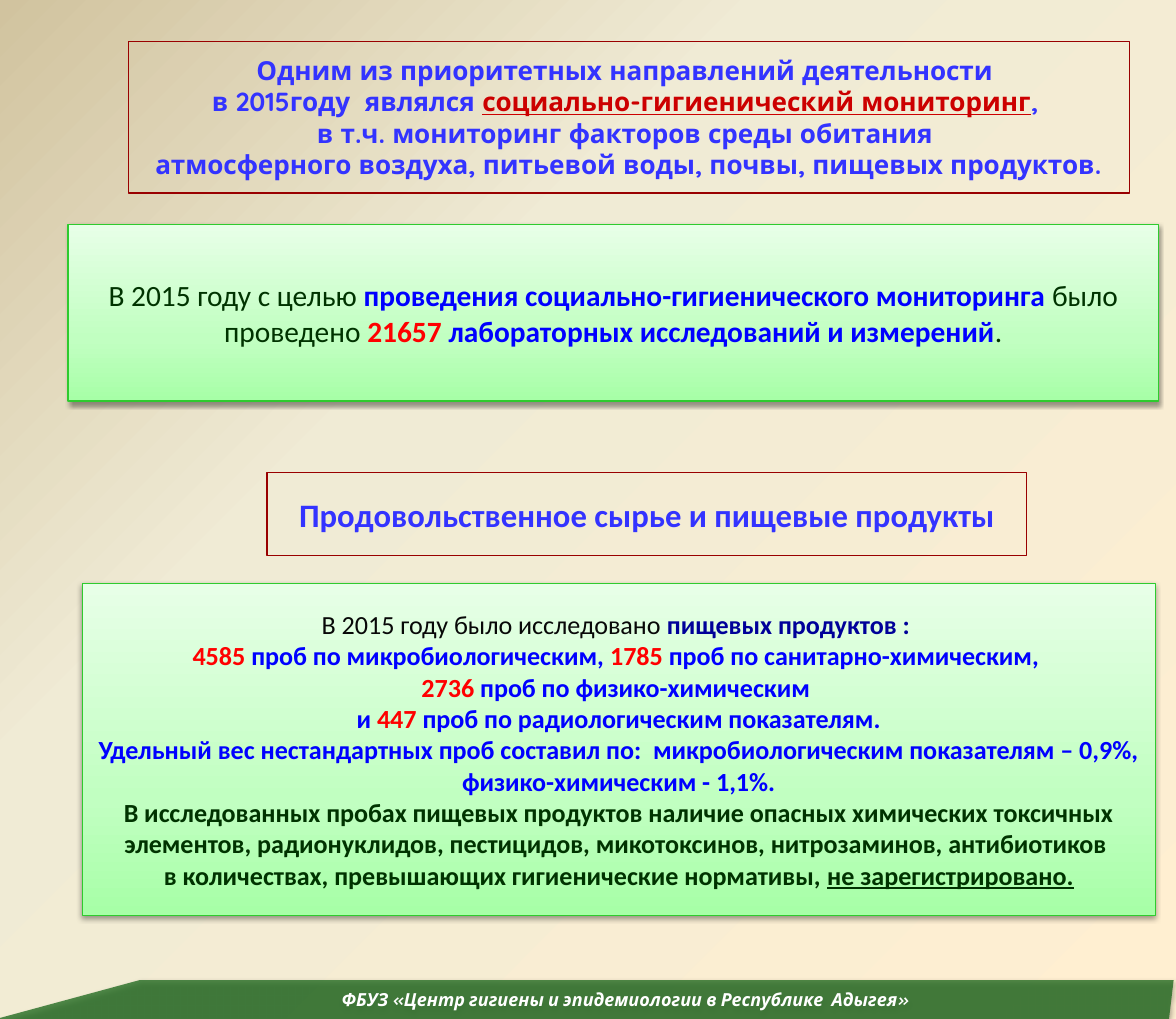
from lxml import etree
from pptx import Presentation
from pptx.dml.color import RGBColor
from pptx.enum.shapes import MSO_SHAPE
from pptx.enum.text import MSO_ANCHOR, MSO_AUTO_SIZE, PP_ALIGN
from pptx.oxml.ns import qn
from pptx.util import Cm, Pt

CENTER = PP_ALIGN.CENTER
MIDDLE = MSO_ANCHOR.MIDDLE
NO_FIT = MSO_AUTO_SIZE.NONE
RECT = MSO_SHAPE.RECTANGLE

VIOLET = RGBColor(0x33, 0x33, 0xFF)
BLUE = RGBColor(0x00, 0x00, 0xFF)
NAVY = RGBColor(0x00, 0x00, 0x99)
RED = RGBColor(0xFF, 0x00, 0x00)
CRIMSON = RGBColor(0xCC, 0x00, 0x00)
MAROON = RGBColor(0x99, 0x00, 0x00)
FOREST = RGBColor(0x00, 0x33, 0x00)
INK = RGBColor(0x08, 0x08, 0x08)
WHITE = RGBColor(0xFF, 0xFF, 0xFF)
BORDER_GREEN = RGBColor(0x2E, 0xCB, 0x2E)
BAND_GREEN = RGBColor(0x19, 0x66, 0x19)
BLACK = RGBColor(0x00, 0x00, 0x00)


def stops(*pairs):
    return [(pos, RGBColor.from_string(color)) for pos, color in pairs]


SAND = stops((0, "FFEFD1"), (65, "F0EBD5"), (100, "D1C39F"))
MINT = stops((0, "A7FFA7"), (35, "C1FFC1"), (100, "E7FFE7"))


def add_color(parent, color, alpha=None):
    clr = etree.SubElement(parent, qn("a:srgbClr"), val=str(color))
    if alpha is not None:
        etree.SubElement(clr, qn("a:alpha"), val=str(alpha * 1000))


def set_gradient(fill, element, color_stops, angle):
    """Fill with any number of stops; the angle runs counter-clockwise."""
    fill.gradient()
    fill.gradient_angle = angle
    gs_list = next(element.iter(qn("a:gsLst")))
    for old in list(gs_list):
        gs_list.remove(old)
    for pos, color in color_stops:
        add_color(etree.SubElement(gs_list, qn("a:gs"), pos=str(pos * 1000)), color)


def add_shadow(sp, alpha, dist):
    sp.shadow.inherit = False
    effects = sp.element.spPr.find(qn("a:effectLst"))
    shadow = etree.SubElement(effects, qn("a:outerShdw"), blurRad=str(int(Pt(3.1))),
                              dist=str(int(Pt(dist))), dir="5400000", rotWithShape="0")
    add_color(shadow, BLACK, alpha)


class Deck:
    def __init__(self, width, height):
        self.prs = Presentation()
        self.prs.slide_width, self.prs.slide_height = Cm(width), Cm(height)
        self.s = self.prs.slides.add_slide(self.prs.slide_layouts[1])
        set_gradient(self.s.background.fill, self.s.element, SAND, 135)

    def add_lines(self, sp, lines, size, font, italic=False):
        """Each line is a list of runs: text, colour and style letters (b, u)."""
        tf = sp.text_frame
        tf.word_wrap, tf.auto_size, tf.vertical_anchor = True, NO_FIT, MIDDLE
        for i, line in enumerate(lines):
            p = tf.add_paragraph() if i else tf.paragraphs[0]
            p.alignment, p.space_before = CENTER, Pt(0)
            for text, color, style in line:
                r = p.add_run()
                r.text = text
                r.font.size, r.font.name = Pt(size), font
                r.font.color.rgb = color
                r.font.bold, r.font.italic = "b" in style, italic
                r.font.underline = "u" in style

    def place(self, sp, box):
        sp.left, sp.top, sp.width, sp.height = map(Cm, box)

    def rect(self, box):
        return self.s.shapes.add_shape(RECT, *map(Cm, box))

    def heading(self, sp, lines, size, font):
        sp.fill.background()
        sp.line.color.rgb, sp.line.width = MAROON, Pt(0.75)
        sp.shadow.inherit = False
        self.add_lines(sp, lines, size, font)

    def panel(self, sp, lines, size):
        set_gradient(sp.fill, sp.element, MINT, 90)
        sp.line.color.rgb, sp.line.width = BORDER_GREEN, Pt(0.75)
        add_shadow(sp, 38, 1.6)
        self.add_lines(sp, lines, size, "Calibri")

    def title(self, box, lines):
        sp = self.s.shapes.title
        self.place(sp, box)
        self.heading(sp, lines, 16, "Quicksand")

    def body(self, box, lines):
        sp = self.s.placeholders[1]
        self.place(sp, box)
        self.panel(sp, lines, 16)
        for p in sp.text_frame.paragraphs:
            p_pr = p._p.get_or_add_pPr()
            p_pr.set("marL", "0")
            p_pr.set("indent", "0")
            etree.SubElement(p_pr, qn("a:buNone"))

    def footer(self, points, text):
        start, *rest = [(Cm(x), Cm(y)) for x, y in points]
        builder = self.s.shapes.build_freeform(*start)
        builder.add_line_segments(rest)
        sp = builder.convert_to_shape()
        sp.fill.solid()
        sp.fill.fore_color.rgb = BAND_GREEN
        clr = next(sp.element.spPr.iter(qn("a:srgbClr")))
        etree.SubElement(clr, qn("a:alpha"), val="75000")
        sp.line.fill.background()
        add_shadow(sp, 35, 1.8)
        self.add_lines(sp, [[(text, WHITE, "b")]], 11, "Karla", italic=True)
        sp.text_frame.margin_left = Cm(2)


def main():
    deck = Deck(25.4, 22)
    deck.title((2.77, 0.89, 21.62, 3.28), [
        [("Одним из приоритетных направлений деятельности ", VIOLET, "b")],
        [("в 2015году  являлся ", VIOLET, "b"),
         ("социально-гигиенический мониторинг", CRIMSON, "bu"), (", ", VIOLET, "b")],
        [("в т.ч. мониторинг факторов среды обитания ", VIOLET, "b")],
        [("атмосферного воздуха, питьевой воды, почвы, пищевых продуктов.", VIOLET, "b")],
    ])
    deck.panel(deck.rect((1.47, 4.85, 23.55, 3.81)), [
        [("В 2015 году с целью ", FOREST, ""),
         ("проведения социально-гигиенического мониторинга ", BLUE, "b"),
         ("было проведено ", FOREST, ""), ("21657 ", RED, "b"),
         ("лабораторных исследований и измерений", BLUE, "b"), (".", FOREST, "")],
    ], 18)
    deck.heading(deck.rect((5.77, 10.21, 16.41, 1.78)), [
        [("Продовольственное сырье и пищевые продукты", VIOLET, "b")],
    ], 20, "Calibri")
    deck.body((1.78, 12.6, 23.17, 7.16), [
        [("В 2015 году было исследовано ", INK, ""), ("пищевых продуктов : ", NAVY, "b")],
        [("4585 ", RED, "b"), ("проб по микробиологическим, ", BLUE, "b"),
         ("1785", RED, "b"), (" проб по санитарно-химическим, ", BLUE, "b")],
        [("2736", RED, "b"), (" проб по физико-химическим ", BLUE, "b")],
        [("и ", BLUE, "b"), ("447", RED, "b"),
         (" проб по радиологическим показателям.", BLUE, "b")],
        [("Удельный вес нестандартных проб составил по:  микробиологическим "
          "показателям – 0,9%, физико-химическим - 1,1%.", BLUE, "b")],
        [("В исследованных пробах пищевых продуктов наличие опасных химических "
          "токсичных элементов, радионуклидов, пестицидов, микотоксинов, "
          "нитрозаминов, антибиотиков ", FOREST, "b")],
        [("в количествах, превышающих гигиенические нормативы, ", FOREST, "b"),
         ("не зарегистрировано.", FOREST, "bu")],
    ])
    deck.footer([(-0.08, 22), (3.02, 21.16), (25.35, 21.16), (25.25, 22)],
                "ФБУЗ «Центр гигиены и эпидемиологии в Республике  Адыгея»")
    deck.prs.save("out.pptx")


if __name__ == "__main__":
    main()
